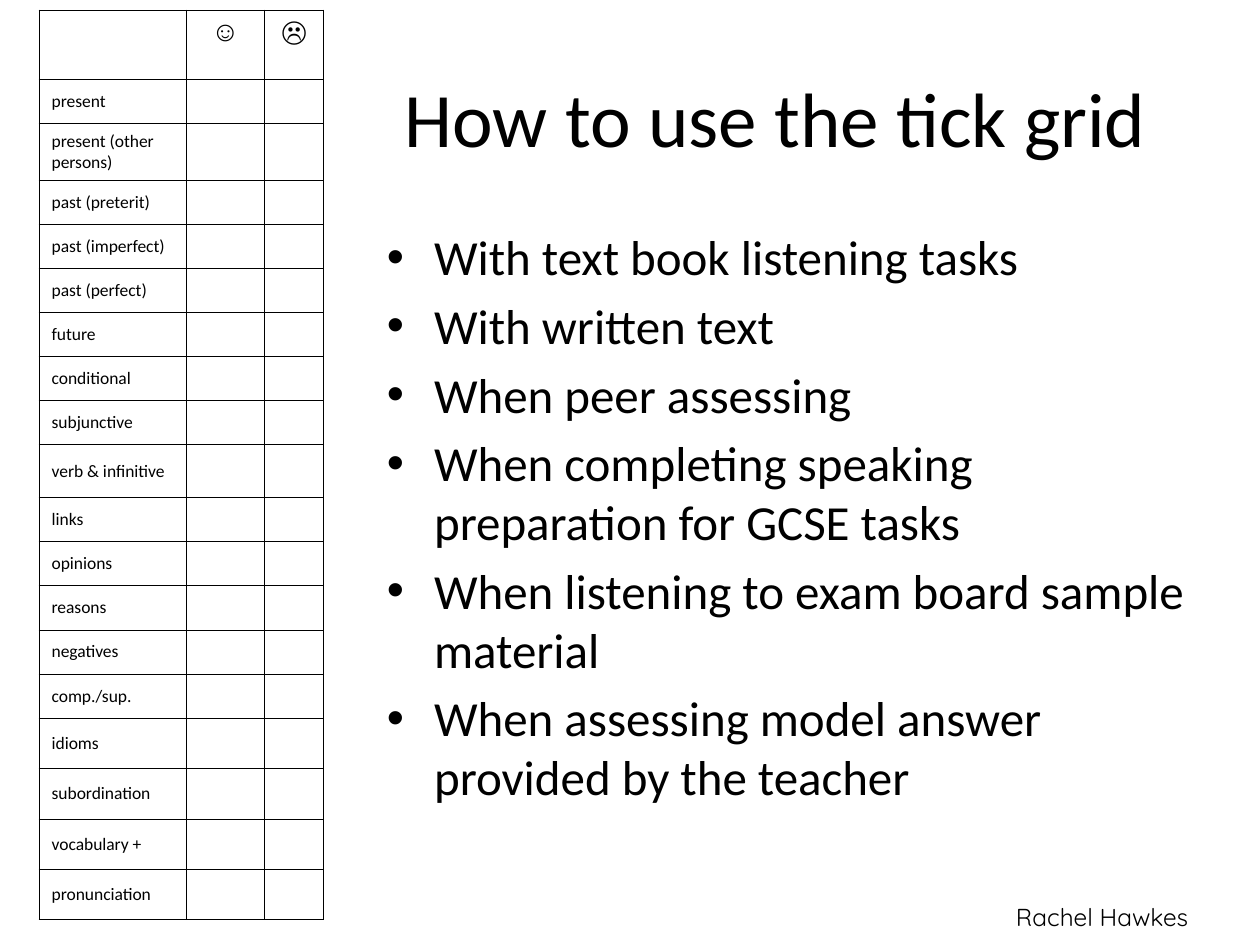
"""Build a slide on using the tick grid, with the grid at its left."""
from lxml import etree
from pptx import Presentation
from pptx.dml.color import RGBColor
from pptx.enum.text import MSO_ANCHOR, MSO_AUTO_SIZE, PP_ALIGN
from pptx.oxml.ns import qn
from pptx.util import Inches, Pt

MIDDLE, TOP = MSO_ANCHOR.MIDDLE, MSO_ANCHOR.TOP
LEFT, CENTER, RIGHT = PP_ALIGN.LEFT, PP_ALIGN.CENTER, PP_ALIGN.RIGHT
FIXED = MSO_AUTO_SIZE.NONE

COLORS = {"ink": "000000", "paper": "FFFFFF"}
TITLE = "How to use the tick grid"
USES = [
    "With text book listening tasks",
    "With written text",
    "When peer assessing",
    "When completing speaking preparation for GCSE tasks",
    "When listening to exam board sample material",
    "When assessing model answer provided by the teacher",
]
AUTHOR = "Rachel Hawkes"
HEADS = ["", "☺", "☹"]
SKILLS = [
    "present", "present (other persons)", "past (preterit)",
    "past (imperfect)", "past (perfect)", "future", "conditional",
    "subjunctive", "verb & infinitive", "links", "opinions", "reasons",
    "negatives", "comp./sup.", "idioms", "subordination", "vocabulary +",
    "pronunciation",
]
COLS = [1.17, 0.62, 0.47]
HEAD, ROW = 0.55, 0.35
TALL = {"present (other persons)": 0.45, "verb & infinitive": 0.42,
        **dict.fromkeys(SKILLS[-4:], 0.4)}


def style(para, size, face="Calibri", align=LEFT):
    font = para.font
    font.size, font.name = Pt(size), face
    font.color.rgb = RGBColor.from_string(COLORS["ink"])
    para.alignment = align


def place(shape, *box):
    shape.left, shape.top, shape.width, shape.height = map(Inches, box)


def border(cell):
    props = cell._tc.get_or_add_tcPr()
    for spot, side in enumerate(("lnL", "lnR", "lnT", "lnB")):
        line = etree.Element(qn(f"a:{side}"), w=str(Pt(0.5)))
        fill = etree.SubElement(line, qn("a:solidFill"))
        etree.SubElement(fill, qn("a:srgbClr"), val=COLORS["ink"])
        props.insert(spot, line)


def add_grid(slide):
    rows = [HEADS] + [[skill, "", ""] for skill in SKILLS]
    highs = [HEAD] + [TALL.get(skill, ROW) for skill in SKILLS]
    box = map(Inches, (0.31, 0.08, sum(COLS), sum(highs)))
    table = slide.shapes.add_table(len(rows), len(COLS), *box).table
    table.first_row = table.horz_banding = False
    for col, wide in zip(table.columns, COLS):
        col.width = Inches(wide)
    for y, (row, high) in enumerate(zip(rows, highs)):
        table.rows[y].height = Inches(high)
        for x, text in enumerate(row):
            cell = table.cell(y, x)
            cell.text = text
            cell.vertical_anchor = MIDDLE if y else TOP
            cell.fill.solid()
            cell.fill.fore_color.rgb = RGBColor.from_string(COLORS["paper"])
            border(cell)
            look = (10, "Calibri", LEFT) if y else (16, "Arial", CENTER)
            para = cell.text_frame.paragraphs[0]
            style(para, *look)
            para.space_before = Pt(look[0] * 0.2)


def main():
    deck = Presentation()
    deck.slide_width, deck.slide_height = Inches(10), Inches(7.5)
    slide = deck.slides.add_slide(deck.slide_layouts[1])
    add_grid(slide)

    title, body = slide.placeholders
    place(title, 2.81, 0.3, 6.69, 1.25)
    title.text_frame.text = TITLE
    title.text_frame.vertical_anchor = MIDDLE
    style(title.text_frame.paragraphs[0], 44, align=CENTER)

    place(body, 2.97, 1.75, 6.53, 4.95)
    body.text_frame.text = "\n".join(USES)
    body.text_frame.auto_size = FIXED
    for para in body.text_frame.paragraphs:
        style(para, 28)

    note = slide.shapes.add_textbox(*map(Inches, (7.19, 7.11, 2.34, 0.34)))
    note.text_frame.word_wrap = True
    note.text_frame.text = AUTHOR
    style(note.text_frame.paragraphs[0], 14, "Quicksand", RIGHT)
    deck.save("out.pptx")


if __name__ == "__main__":
    main()
